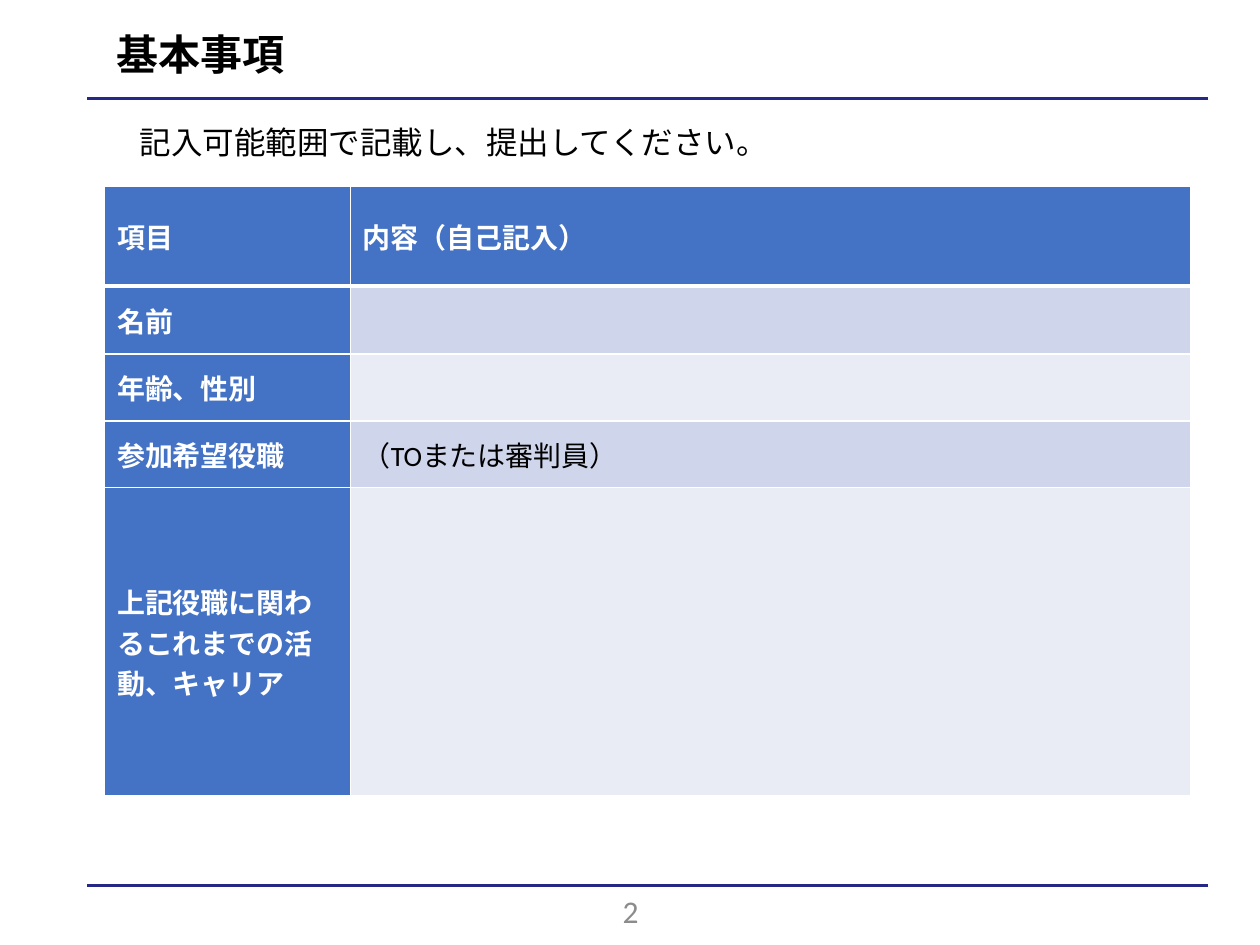
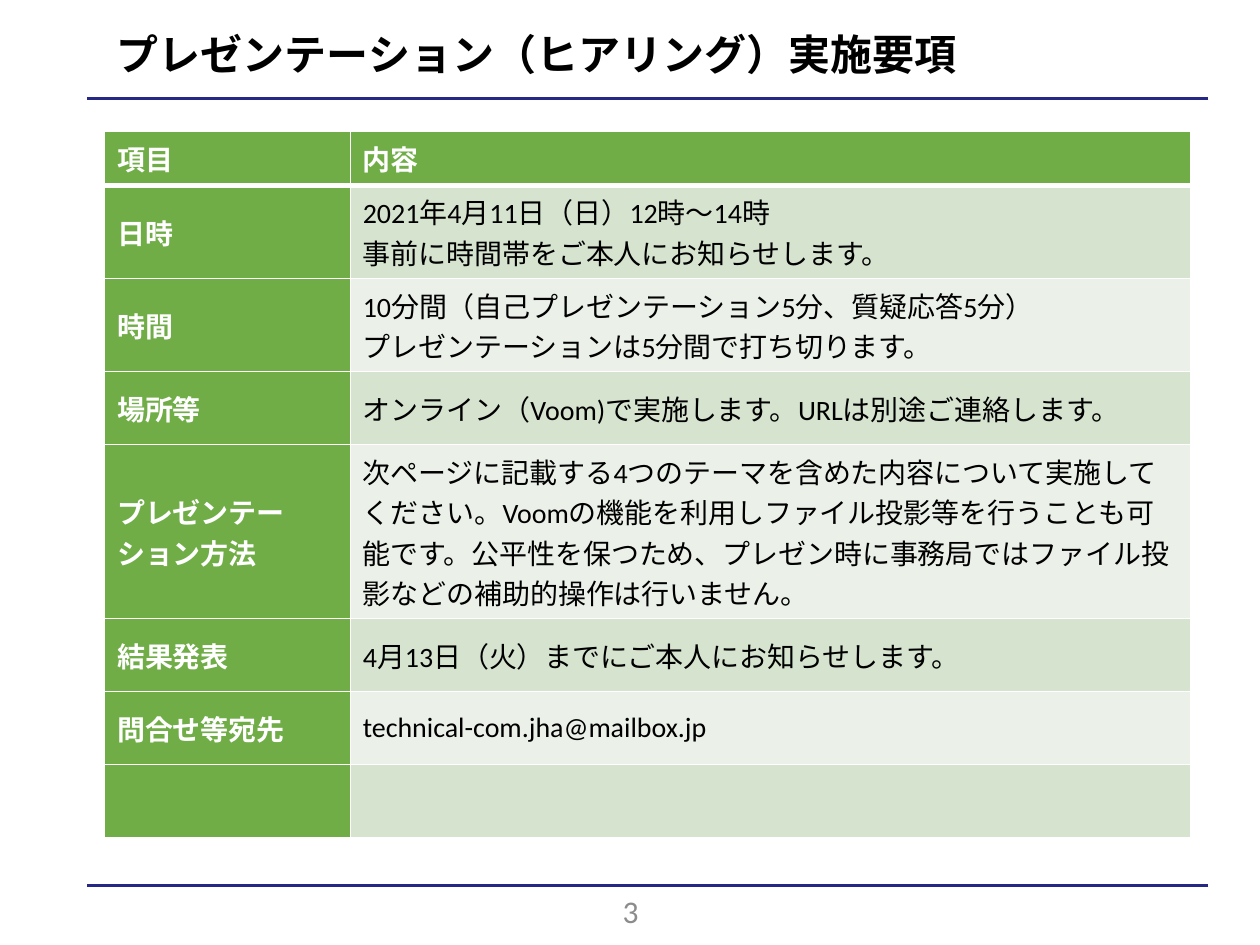
from dataclasses import dataclass

import lxml.etree
import pptx
import pptx.dml.color
import pptx.enum.lang
import pptx.enum.shapes
import pptx.enum.text
import pptx.oxml.ns
import pptx.util

Inches = pptx.util.Inches
Pt = pptx.util.Pt
ALIGN = pptx.enum.text.PP_ALIGN
ANCHOR = pptx.enum.text.MSO_ANCHOR


@dataclass(frozen=True)
class Theme:
    body_font: str = "Calibri"
    title_font: str = "DejaVu Sans"
    title_size: int = 24
    note_size: int = 18
    cell_size: int = 16
    ink: str = "000000"
    white: str = "FFFFFF"
    rule: str = "252985"
    page: str = "8C8C8C"
    # Each palette: header colour, odd row, even row
    blue: tuple = ("4472C4", "CFD5EA", "E9EBF5")
    green: tuple = ("70AD47", "D5E3CF", "EBF1E9")


THEME = Theme()
LEFT, WIDTH = 0.83, 8.62
COLUMNS = (1.95, 6.67)

PROFILE_ROWS = [
    (0.79, "項目", "内容（自己記入）"),
    (0.54, "名前", ""),
    (0.53, "年齢、性別", ""),
    (0.53, "参加希望役職", "（TOまたは審判員）"),
    (2.45, "上記役職に関わるこれまでの活動、キャリア", ""),
]

HEARING_ROWS = [
    (0.43, "項目", "内容"),
    (0.74, "日時", "2021年4月11日（日）12時～14時\n事前に時間帯をご本人にお知らせします。"),
    (0.74, "時間", "10分間（自己プレゼンテーション5分、質疑応答5分）\n"
                 "プレゼンテーションは5分間で打ち切ります。"),
    (0.58, "場所等", "オンライン（Voom)で実施します。URLは別途ご連絡します。"),
    (1.38, "プレゼンテーション方法",
     "次ページに記載する4つのテーマを含めた内容について実施してください。"
     "Voomの機能を利用しファイル投影等を行うことも可能です。"
     "公平性を保つため、プレゼン時に事務局ではファイル投影などの補助的操作は行いません。"),
    (0.58, "結果発表", "4月13日（火）までにご本人にお知らせします。"),
    (0.58, "問合せ等宛先", "technical-com.jha@mailbox.jp"),
    (0.58, "", ""),
]


def rgb(value):
    return pptx.dml.color.RGBColor.from_string(value)


def write(frame, text, size, color, bold=False, font=THEME.body_font,
          align=ALIGN.LEFT, spacing=1.0):
    """Write each line of text as a paragraph with one run."""
    for index, line in enumerate(text.split("\n")):
        paragraph = frame.paragraphs[0] if index == 0 else frame.add_paragraph()
        paragraph.alignment = align
        paragraph.line_spacing = spacing
        paragraph.font.size = Pt(size)
        if line:
            run = paragraph.add_run()
            run.text = line
            run.font.name = font
            run.font.size = Pt(size)
            run.font.bold = bold
            run.font.color.rgb = rgb(color)
            run.font.language_id = pptx.enum.lang.MSO_LANGUAGE_ID.JAPANESE


def add_label(slide, box, text, size, color, anchor=ANCHOR.MIDDLE, wrap=True, **style):
    label = slide.shapes.add_textbox(*(Inches(length) for length in box))
    label.text_frame.word_wrap = wrap
    label.text_frame.vertical_anchor = anchor
    write(label.text_frame, text, size, color, **style)
    return label


def add_rule(slide, y):
    rule = slide.shapes.add_connector(
        pptx.enum.shapes.MSO_CONNECTOR.STRAIGHT,
        Inches(9.59), Inches(y), Inches(0.69), Inches(y))
    rule.line.color.rgb = rgb(THEME.rule)
    rule.line.width = Pt(1.5)
    lxml.etree.SubElement(rule._element.spPr, pptx.oxml.ns.qn("a:effectLst"))


def add_page(deck, title, number):
    """Blank slide with the shared rules, title and page number."""
    slide = deck.slides.add_slide(deck.slide_layouts[6])
    add_rule(slide, 7.03)
    add_rule(slide, 0.78)
    add_label(slide, (LEFT, 0.1, WIDTH, 0.7), title, THEME.title_size, THEME.ink,
              bold=True, font=THEME.title_font, spacing=0.9)
    add_label(slide, (3.88, 7.03, 2.25, 0.4), str(number), THEME.note_size,
              THEME.page, align=ALIGN.CENTER)
    return slide


def set_borders(cell, top, bottom):
    """White borders; they must come before the fill, in schema order."""
    qn = pptx.oxml.ns.qn
    properties = cell._tc.get_or_add_tcPr()
    widths = {"a:lnL": 1, "a:lnR": 1, "a:lnT": top, "a:lnB": bottom}
    for position, (side, width) in enumerate(widths.items()):
        border = lxml.etree.Element(qn(side), w=str(Pt(width)))
        fill = lxml.etree.SubElement(border, qn("a:solidFill"))
        lxml.etree.SubElement(fill, qn("a:srgbClr"), val=THEME.white)
        properties.insert(position, border)


def add_item_table(slide, top, rows, palette):
    """Two columns: coloured item names and banded contents."""
    header, *bands = palette
    height = sum(row[0] for row in rows)
    table = slide.shapes.add_table(
        len(rows), len(COLUMNS), Inches(LEFT), Inches(top),
        Inches(WIDTH), Inches(height)).table
    for column, width in zip(table.columns, COLUMNS):
        column.width = Inches(width)
    for r, (row_height, *texts) in enumerate(rows):
        table.rows[r].height = Inches(row_height)
        for c, text in enumerate(texts):
            heading = r == 0 or c == 0
            cell = table.cell(r, c)
            cell.vertical_anchor = ANCHOR.MIDDLE
            cell.fill.solid()
            cell.fill.fore_color.rgb = rgb(header if heading else bands[(r - 1) % 2])
            set_borders(cell, top=3 if r == 1 else 1, bottom=3 if r == 0 else 1)
            write(cell.text_frame, text, THEME.cell_size,
                  THEME.white if heading else THEME.ink, bold=heading)


def build_profile(deck):
    slide = add_page(deck, "基本事項", 2)
    add_item_table(slide, 1.48, PROFILE_ROWS, THEME.blue)
    # Instruction above the table
    note = add_label(slide, (1.01, 0.93, 5.25, 0.4),
                     "記入可能範囲で記載し、提出してください。",
                     THEME.note_size, THEME.ink, anchor=ANCHOR.TOP, wrap=False)
    note.text_frame.auto_size = pptx.enum.text.MSO_AUTO_SIZE.SHAPE_TO_FIT_TEXT


def build_hearing(deck):
    slide = add_page(deck, "プレゼンテーション（ヒアリング）実施要項", 3)
    add_item_table(slide, 1.04, HEARING_ROWS, THEME.green)


def main():
    deck = pptx.Presentation()
    deck.slide_width = Inches(10)
    deck.slide_height = Inches(7.5)
    build_profile(deck)
    build_hearing(deck)
    deck.save("out.pptx")


if __name__ == "__main__":
    main()
